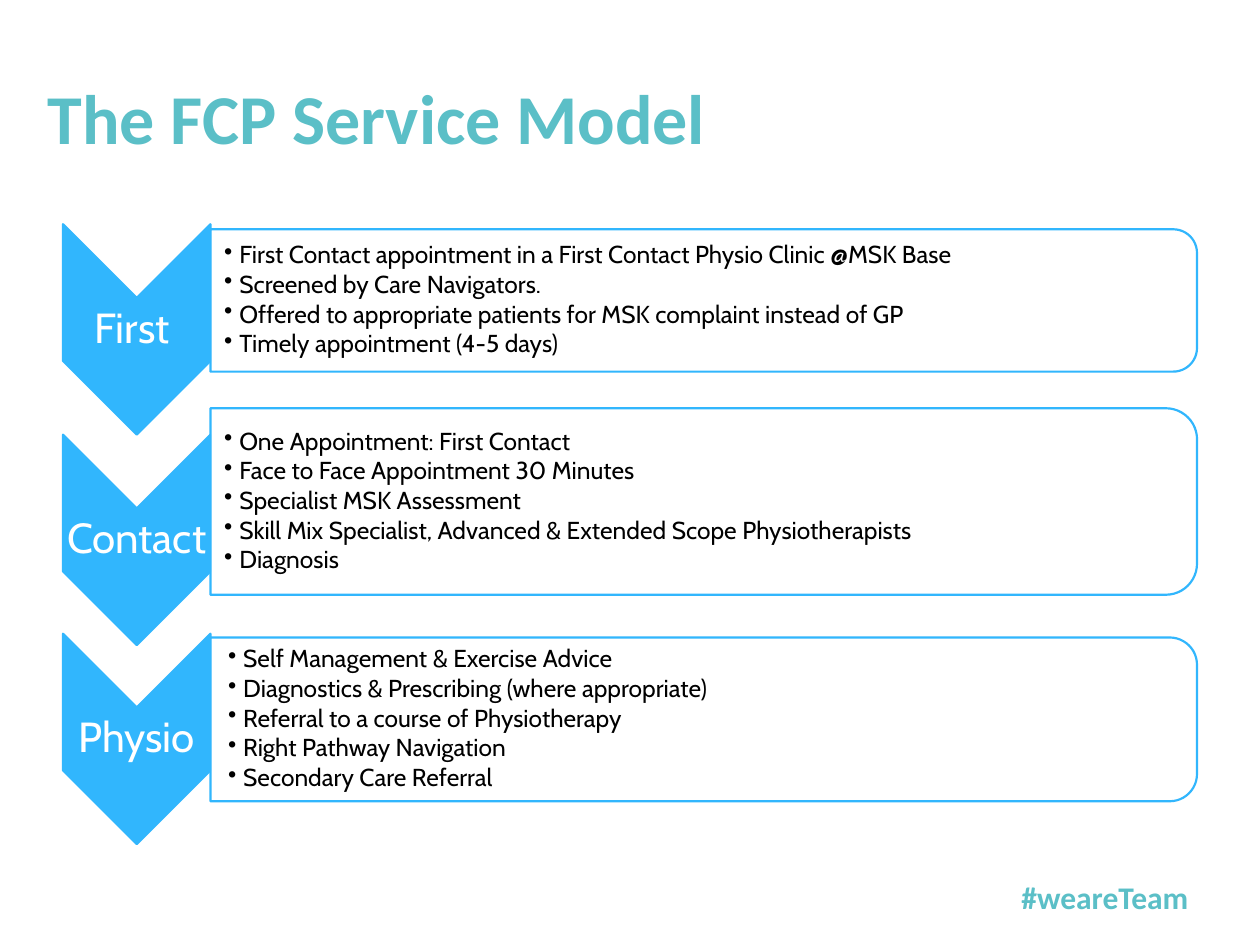
from lxml.etree import SubElement
from pptx import Presentation
from pptx.dml.color import RGBColor
from pptx.enum.shapes import MSO_SHAPE
from pptx.enum.text import MSO_ANCHOR, PP_ALIGN
from pptx.oxml.ns import qn
from pptx.util import Inches, Pt

COLORS = {"teal": "5BBFC7", "blue": "31B6FD", "white": "FFFFFF", "black": "000000"}
LEFT, CHEVRON_W, CHEVRON_H = 0.5, 1.17, 1.67
PANEL_LEFT, PANEL_W = LEFT + CHEVRON_W, 7.83
INDENT = 0.12

# label, chevron top, panel top, panel height, text inset, bullets
STAGES = [
    ("First ", 1.78, 1.82, 1.13, 0.11, [
        "First Contact appointment in a First Contact Physio Clinic @MSK Base",
        "Screened by Care Navigators.",
        "Offered to appropriate patients for MSK complaint instead of GP",
        "Timely appointment (4-5 days)",
    ]),
    ("Contact", 3.45, 3.24, 1.48, 0.11, [
        "One Appointment: First Contact",
        "Face to Face Appointment 30 Minutes",
        "Specialist MSK Assessment",
        "Skill Mix Specialist, Advanced & Extended Scope Physiotherapists",
        "Diagnosis",
    ]),
    ("Physio", 5.03, 5.06, 1.3, 0.14, [
        "Self Management & Exercise Advice",
        "Diagnostics & Prescribing (where appropriate)",
        "Referral to a course of Physiotherapy",
        "Right Pathway Navigation",
        "Secondary Care Referral",
    ]),
]


def rgb(name):
    return RGBColor.from_string(COLORS[name])


def add_bullet(p):
    pPr = p._p.get_or_add_pPr()
    pPr.set("marL", str(Inches(INDENT)))
    pPr.set("indent", str(-Inches(INDENT)))
    SubElement(pPr, qn("a:buChar"), char="•")


def add_text(s, box, lines, size, color, font="Cabin", bold=False, align=PP_ALIGN.LEFT,
             anchor=MSO_ANCHOR.MIDDLE, insets=(0.1, 0.05, 0.1, 0.05),
             bullets=False, spacing=None, after=None):
    tf = s.shapes.add_textbox(*map(Inches, box)).text_frame
    tf.word_wrap = True
    tf.vertical_anchor = anchor
    tf.margin_left, tf.margin_top, tf.margin_right, tf.margin_bottom = map(Inches, insets)
    for i, line in enumerate(lines):
        p = tf.paragraphs[0] if i == 0 else tf.add_paragraph()
        if bullets:
            add_bullet(p)
        p.alignment = align
        p.line_spacing = spacing
        p.space_after = after
        r = p.add_run()
        r.text = line
        r.font.name, r.font.size, r.font.bold = font, Pt(size), bold
        r.font.color.rgb = rgb(color)


def add_turned_shape(s, kind, left, top, width, height, fill):
    """Draw a preset turned by 90 degrees so that it covers the given visible box."""
    shift = (width - height) / 2
    sp = s.shapes.add_shape(kind, Inches(left + shift), Inches(top - shift),
                            Inches(height), Inches(width))
    sp.rotation = 90
    sp.shadow.inherit = False
    sp.fill.solid()
    sp.fill.fore_color.rgb = rgb(fill)
    sp.line.color.rgb = rgb("blue")
    sp.line.width = Pt(1.25)
    return sp


def add_stage(s, label, chevron_top, panel_top, panel_h, inset, lines):
    add_turned_shape(s, MSO_SHAPE.CHEVRON, LEFT, chevron_top, CHEVRON_W, CHEVRON_H, "blue")
    add_text(s, (LEFT, chevron_top + CHEVRON_W / 2, CHEVRON_W, CHEVRON_H - CHEVRON_W),
             [label], 24, "white", align=PP_ALIGN.CENTER, insets=(0.02,) * 4, spacing=0.9)
    panel = add_turned_shape(s, MSO_SHAPE.ROUND_2_SAME_RECTANGLE, PANEL_LEFT, panel_top,
                             PANEL_W, panel_h, "white")
    color = panel.fill._xPr.find(qn("a:solidFill"))[0]
    SubElement(color, qn("a:alpha"), val="90000")
    add_text(s, (PANEL_LEFT, panel_top, PANEL_W, panel_h), lines, 14, "black",
             insets=(inset, 0.01, 0.01, 0.01), bullets=True, spacing=0.9, after=Pt(1.8))


def main():
    prs = Presentation()
    prs.slide_width, prs.slide_height = Inches(10), Inches(7.5)
    s = prs.slides.add_slide(prs.slide_layouts[6])
    add_text(s, (7.2, 6.92, 2.33, 0.4), ["#weareTeam"], 18, "teal", font="Calibri",
             bold=True, align=PP_ALIGN.RIGHT, anchor=MSO_ANCHOR.TOP)
    add_text(s, (0.28, 0.3, 9, 1.25), ["The FCP Service Model"], 40, "teal",
             font="Calibri", bold=True)
    for stage in STAGES:
        add_stage(s, *stage)
    prs.save("out.pptx")


if __name__ == "__main__":
    main()
